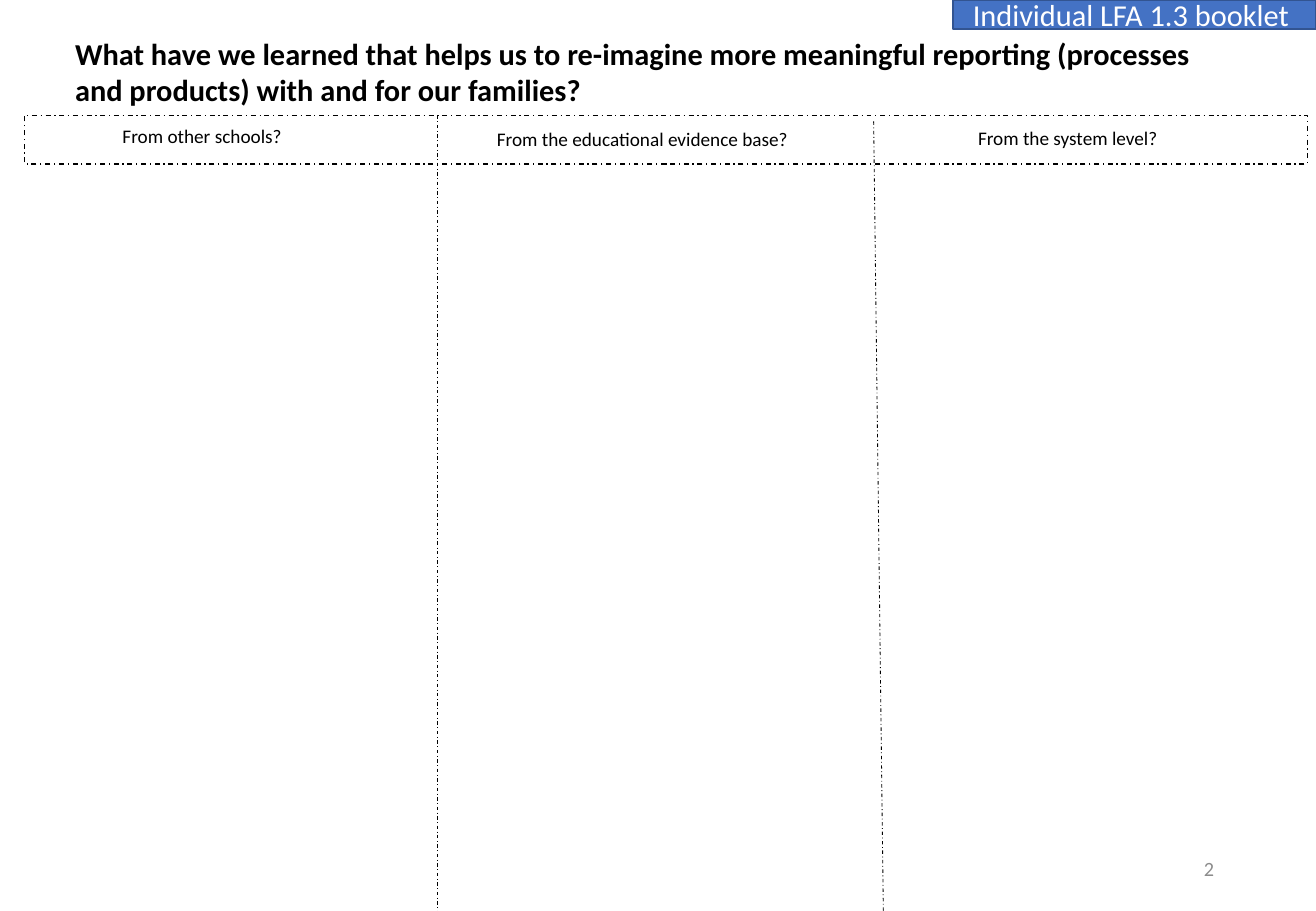
"""Build a three-column worksheet slide on meaningful reporting."""
from dataclasses import dataclass

from lxml.etree import SubElement
from pptx import Presentation
from pptx.dml.color import RGBColor
from pptx.enum.dml import MSO_LINE
from pptx.enum.shapes import MSO_CONNECTOR, MSO_SHAPE
from pptx.enum.text import MSO_ANCHOR, PP_ALIGN
from pptx.oxml.ns import qn
from pptx.util import Inches, Pt


@dataclass(frozen=True)
class Theme:
    """Colours, font and type sizes of the slide."""
    font: str = "Calibri"
    ink: RGBColor = RGBColor(0x00, 0x00, 0x00)
    muted: RGBColor = RGBColor(0x8C, 0x8C, 0x8C)
    tag_fill: RGBColor = RGBColor(0x44, 0x72, 0xC4)
    tag_line: RGBColor = RGBColor(0x32, 0x54, 0x91)
    tag_text: RGBColor = RGBColor(0xFF, 0xFF, 0xFF)
    title_size: float = 18
    heading_size: float = 11.4
    number_size: float = 12


THEME = Theme()
COLUMN_HEADINGS = [
    ("From other schools?", (0.91, 0.97, 2.34, 0.29)),
    ("From the educational evidence base?", (3.99, 1, 2.69, 0.29)),
    ("From the system level?", (7.95, 0.99, 2.69, 0.29)),
]
COLUMN_DIVIDERS = [((3.6, 0.95), (3.6, 7.5)), ((7.19, 1), (7.27, 7.53))]


def write(shape, text, size, color, bold=False, align=PP_ALIGN.LEFT, anchor=MSO_ANCHOR.TOP):
    """Put one styled paragraph into a shape."""
    frame = shape.text_frame
    frame.word_wrap = True
    frame.vertical_anchor = anchor
    paragraph = frame.paragraphs[0]
    paragraph.text = text
    paragraph.alignment = align
    font = paragraph.font
    font.name, font.size, font.bold = THEME.font, Pt(size), bold
    font.color.rgb = color


def add_text(slide, box, text, size, color=THEME.ink, **style):
    """Add a wrapping text box."""
    write(slide.shapes.add_textbox(*map(Inches, box)), text, size, color, **style)


def set_line(line, color, width, dash=None):
    """Style an outline or a connector."""
    line.color.rgb = color
    line.width = Pt(width)
    line.dash_style = dash


def add_box(slide, box, line_color, width, dash=None, fill=None):
    """Add a rectangle without a shadow."""
    rectangle = slide.shapes.add_shape(MSO_SHAPE.RECTANGLE, *map(Inches, box))
    rectangle.shadow.inherit = False
    if fill is None:
        rectangle.fill.background()
    else:
        rectangle.fill.solid()
        rectangle.fill.fore_color.rgb = fill
    set_line(rectangle.line, line_color, width, dash)
    return rectangle


def add_divider(slide, start, end):
    """Add a dash-dotted line between two columns."""
    divider = slide.shapes.add_connector(MSO_CONNECTOR.STRAIGHT, *map(Inches, start + end))
    set_line(divider.line, THEME.ink, 0.5, MSO_LINE.DASH_DOT)
    SubElement(divider._element.spPr, qn("a:effectLst"))


def main():
    """Compose and save the slide."""
    presentation = Presentation()
    presentation.slide_width = Inches(10.83)
    presentation.slide_height = Inches(7.5)
    slide = presentation.slides.add_slide(presentation.slide_layouts[6])

    add_box(slide, (0.2, 0.95, 10.56, 0.4), THEME.ink, 0.75, MSO_LINE.DASH_DOT)
    add_text(slide, (0.52, 0.24, 9.57, 0.71),
             "What have we learned that helps us to re-imagine more meaningful reporting "
             "(processes and products) with and for our families?",
             THEME.title_size, bold=True)
    for start, end in COLUMN_DIVIDERS:
        add_divider(slide, start, end)
    for heading, box in COLUMN_HEADINGS:
        add_text(slide, box, heading, THEME.heading_size)
    add_text(slide, (7.65, 6.95, 2.44, 0.4), "2", THEME.number_size, THEME.muted,
             align=PP_ALIGN.RIGHT, anchor=MSO_ANCHOR.MIDDLE)
    booklet_tag = add_box(slide, (7.84, 0, 2.99, 0.24), THEME.tag_line, 1, fill=THEME.tag_fill)
    write(booklet_tag, "Individual LFA 1.3 booklet ", THEME.title_size, THEME.tag_text,
          align=PP_ALIGN.CENTER, anchor=MSO_ANCHOR.MIDDLE)

    presentation.save("out.pptx")


if __name__ == "__main__":
    main()
